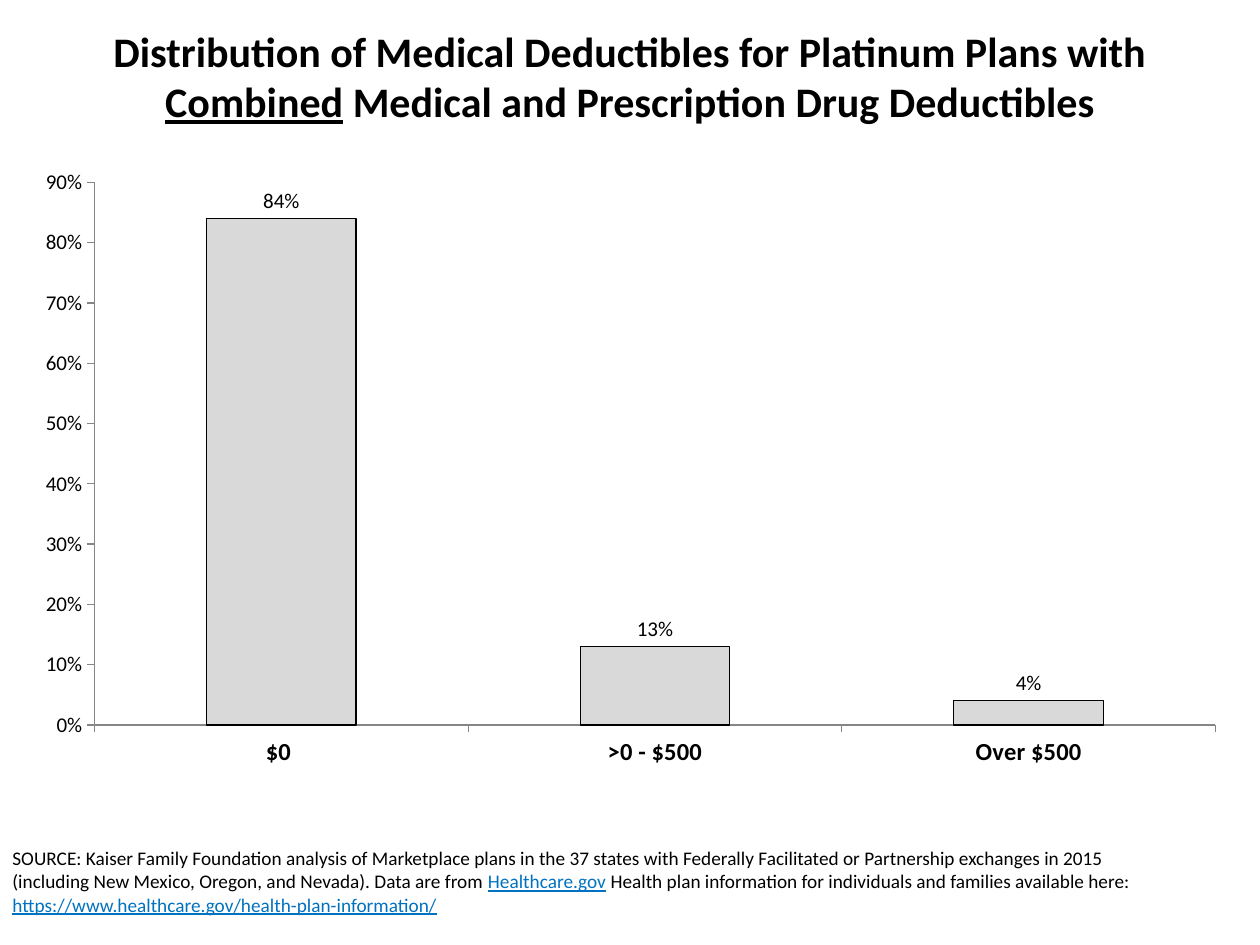
from lxml.etree import SubElement
from pptx import Presentation
from pptx.chart.data import CategoryChartData
from pptx.dml.color import RGBColor
from pptx.enum.chart import XL_CHART_TYPE, XL_LABEL_POSITION, XL_TICK_MARK
from pptx.enum.text import MSO_ANCHOR, PP_ALIGN
from pptx.oxml.ns import qn
from pptx.util import Inches, Pt

BLACK = RGBColor(0, 0, 0)
BLUE = RGBColor(0x00, 0x72, 0xC0)
GRAY = RGBColor(0xD9, 0xD9, 0xD9)
AXIS = RGBColor(0x86, 0x86, 0x86)
FACE = "Calibri"

TITLE = [
    ("Distribution of Medical Deductibles for Platinum Plans with ", {}),
    ("Combined", {"underline": True}),
    (" Medical and Prescription Drug Deductibles", {}),
]
SOURCE = [
    ("SOURCE: Kaiser Family Foundation analysis of Marketplace plans in the 37 states "
     "with Federally Facilitated or Partnership exchanges in 2015 (including New Mexico, "
     "Oregon, and Nevada). Data are from ", {}),
    ("Healthcare.gov", {"underline": True, "color": BLUE}),
    (" Health plan information for individuals and families available here: ", {}),
    ("https://www.healthcare.gov/health-plan-information/",
     {"underline": True, "color": BLUE}),
]
SHARES = {"$0 ": 0.84, ">0 - $500": 0.13, "Over $500": 0.04}
LAYOUT = {"layoutTarget": "inner", "xMode": "edge", "yMode": "edge",
          "x": "0.06", "y": "0.04", "w": "0.92", "h": "0.87"}


def style(font, color=BLACK, **format):
    font.color.rgb = color
    for name, value in {"name": FACE, **format}.items():
        setattr(font, name, value)


def add_text(slide, box, runs, align, anchor, **format):
    frame = slide.shapes.add_textbox(*map(Inches, box)).text_frame
    frame.word_wrap = True
    frame.vertical_anchor = anchor
    line = frame.paragraphs[0]
    line.alignment = align
    for text, extra in runs:
        run = line.add_run()
        run.text = text
        style(run.font, **{**format, **extra})


def set_axis(axis, **format):
    axis.has_major_gridlines = False
    axis.major_tick_mark = XL_TICK_MARK.OUTSIDE
    axis.minor_tick_mark = XL_TICK_MARK.NONE
    axis.format.line.color.rgb = AXIS
    axis.format.line.width = Pt(0.75)
    style(axis.tick_labels.font, **format)


def set_plot(chart):
    area = chart.plots[0]._element.getparent()
    for old in area.findall(qn("c:layout")):
        area.remove(old)
    layout = SubElement(area, qn("c:layout"))
    area.insert(0, layout)
    manual = SubElement(layout, qn("c:manualLayout"))
    for name, value in LAYOUT.items():
        SubElement(manual, qn("c:" + name)).set("val", value)


def add_bars(slide, box):
    data = CategoryChartData(number_format="0%")
    data.categories = list(SHARES)
    data.add_series("Series 1", list(SHARES.values()))
    chart = slide.shapes.add_chart(
        XL_CHART_TYPE.COLUMN_CLUSTERED, *map(Inches, box), data).chart
    chart.has_legend = False
    chart.has_title = False
    style(chart.font, size=Pt(18))
    set_plot(chart)
    set_axis(chart.category_axis, size=Pt(14), bold=True)
    scale = chart.value_axis
    set_axis(scale, size=Pt(12), bold=False)
    for name, value in {"minimum_scale": 0, "maximum_scale": 0.9, "major_unit": 0.1}.items():
        setattr(scale, name, value)
    scale.tick_labels.number_format = "0%"
    scale.tick_labels.number_format_is_linked = False
    plot = chart.plots[0]
    plot.gap_width = 150
    plot.vary_by_categories = False
    bars = plot.series[0]
    bars.format.fill.solid()
    bars.format.fill.fore_color.rgb = GRAY
    bars.format.line.color.rgb = BLACK
    bars.format.line.width = Pt(0.75)
    labels = bars.data_labels
    for name, value in {"show_value": True, "number_format": "0%",
                        "number_format_is_linked": False,
                        "position": XL_LABEL_POSITION.OUTSIDE_END}.items():
        setattr(labels, name, value)
    style(labels.font, size=Pt(12), bold=False)


def main():
    deck = Presentation()
    deck.slide_width, deck.slide_height = Inches(10), Inches(7.5)
    slide = deck.slides.add_slide(deck.slide_layouts[6])
    add_text(slide, (0, 6.67, 9.25, 0.84), SOURCE, PP_ALIGN.LEFT, MSO_ANCHOR.TOP, size=Pt(11))
    add_text(slide, (0.1, 0.1, 9.8, 1), TITLE, PP_ALIGN.CENTER, MSO_ANCHOR.MIDDLE,
             size=Pt(24), bold=True)
    add_bars(slide, (0.17, 1.25, 9.67, 4.95))
    deck.save("out.pptx")


if __name__ == "__main__":
    main()
